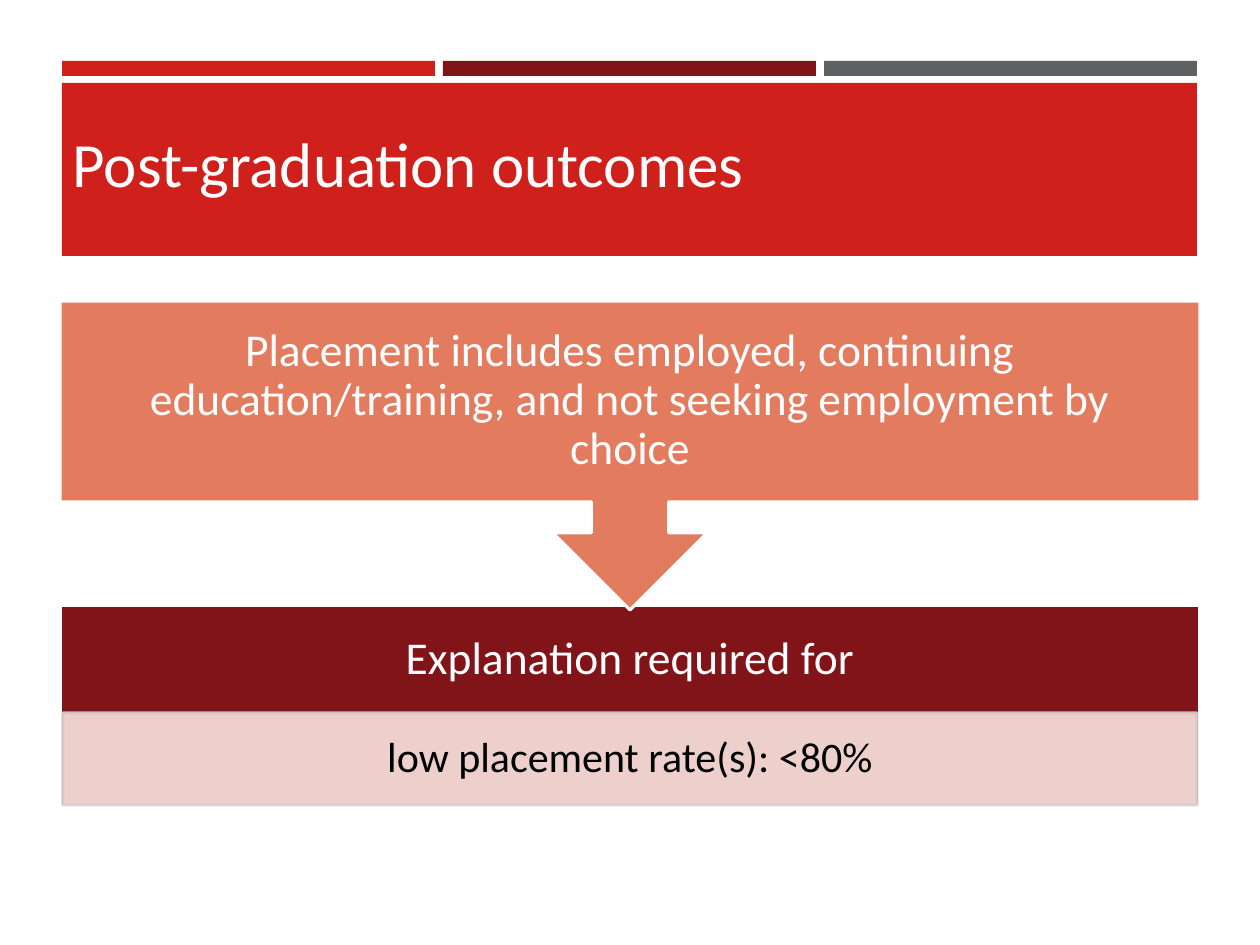
"""Build the post-graduation outcomes slide."""
from dataclasses import dataclass

from lxml import etree
from pptx import Presentation
from pptx import util as u
from pptx.dml import color
from pptx.enum import shapes, text
from pptx.oxml import ns


@dataclass(frozen=True)
class Theme:
    """Colours, type sizes and line width."""
    font: str = "Calibri"
    red: str = "D0201C"
    maroon: str = "811419"
    gray: str = "5F6062"
    coral: str = "E37B5F"
    blush: str = "F9E5DF"
    blush_edge: str = "D8CCCC"
    white: str = "FFFFFF"
    title_color: str = "FFFEFF"
    black: str = "000000"
    title_size: int = 36
    body_size: int = 26
    detail_size: int = 24
    line_width: float = 1.75


def px(value):
    """Turn pixels at 126 to the inch into EMU."""
    return u.Emu(round(value * 914400 / 126))


class SlideBuilder:
    """Holds the theme and the current slide."""

    def __init__(self, deck, theme):
        """Add a title-only slide to the deck."""
        self.theme = theme
        self.slide = deck.slides.add_slide(deck.slide_layouts[5])

    def paint(self, fill, rgb, opacity=100):
        """Set a solid colour, with transparency if asked."""
        fill.solid()
        fill.fore_color.rgb = color.RGBColor.from_string(rgb)
        if opacity < 100:
            solid = fill._xPr.find(ns.qn("a:solidFill"))
            etree.SubElement(solid[0], ns.qn("a:alpha"), val=str(opacity * 1000))

    def set_words(self, frame, words, size, rgb, align):
        """Put one middle-anchored paragraph into a text frame."""
        frame.text = words
        frame.word_wrap = True
        frame.auto_size = text.MSO_AUTO_SIZE.NONE
        frame.vertical_anchor = text.MSO_ANCHOR.MIDDLE
        para = frame.paragraphs[0]
        para.alignment = align
        para.line_spacing = 0.9
        font = para.runs[0].font
        font.name = self.theme.font
        font.size = u.Pt(size)
        font.color.rgb = color.RGBColor.from_string(rgb)

    def shape(self, area, fill, line=None, opacity=100, kind=shapes.MSO_SHAPE.RECTANGLE):
        """Add a filled preset shape."""
        box = self.slide.shapes.add_shape(kind, *map(px, area))
        box.shadow.inherit = False
        self.paint(box.fill, fill, opacity)
        if line:
            box.line.width = u.Pt(self.theme.line_width)
            self.paint(box.line.fill, line, opacity)
        else:
            box.line.fill.background()
        return box

    def label(self, area, words, size, rgb, inset):
        """Add a centred text box with side and vertical insets."""
        frame = self.slide.shapes.add_textbox(*map(px, area)).text_frame
        side, vertical = map(px, inset)
        frame.margin_left = frame.margin_right = side
        frame.margin_top = frame.margin_bottom = vertical
        self.set_words(frame, words, size, rgb, text.PP_ALIGN.CENTER)

    def title(self, area, words):
        """Place and format the title in front of the band."""
        title = self.slide.shapes.title
        title.left, title.top, title.width, title.height = map(px, area)
        self.set_words(title.text_frame, words, self.theme.title_size,
                       self.theme.title_color, text.PP_ALIGN.LEFT)
        self.slide.shapes.element.append(title.element)


def main():
    """Build and save the deck."""
    deck = Presentation()
    deck.slide_width, deck.slide_height = px(1260), px(945)
    theme = Theme()
    page = SlideBuilder(deck, theme)

    for column, fill in enumerate((theme.red, theme.maroon, theme.gray)):
        page.shape((62 + 381 * column, 61, 373, 15), fill)
    page.shape((62, 83, 1135, 173), theme.red)
    page.title((60, 97, 1140, 140), "Post-graduation outcomes")

    page.shape((60, 606, 1140, 200), theme.maroon, theme.white)
    page.label((60, 606, 1140, 108), "Explanation required for",
               theme.body_size, theme.white, (25, 25))
    detail = (63, 713, 1134, 92)
    page.shape(detail, theme.blush, theme.blush_edge, opacity=90)
    page.label(detail, "low placement rate(s): <80%",
               theme.detail_size, theme.black, (24, 4))

    callout = page.shape((60, 301, 1140, 309), theme.coral, theme.white,
                         kind=shapes.MSO_SHAPE.UP_ARROW_CALLOUT)
    callout.rotation = 180
    page.label((60, 301, 1140, 200),
               "Placement includes employed, continuing education/training, "
               "and not seeking employment by choice",
               theme.body_size, theme.white, (25, 25))

    deck.save("out.pptx")


if __name__ == "__main__":
    main()
